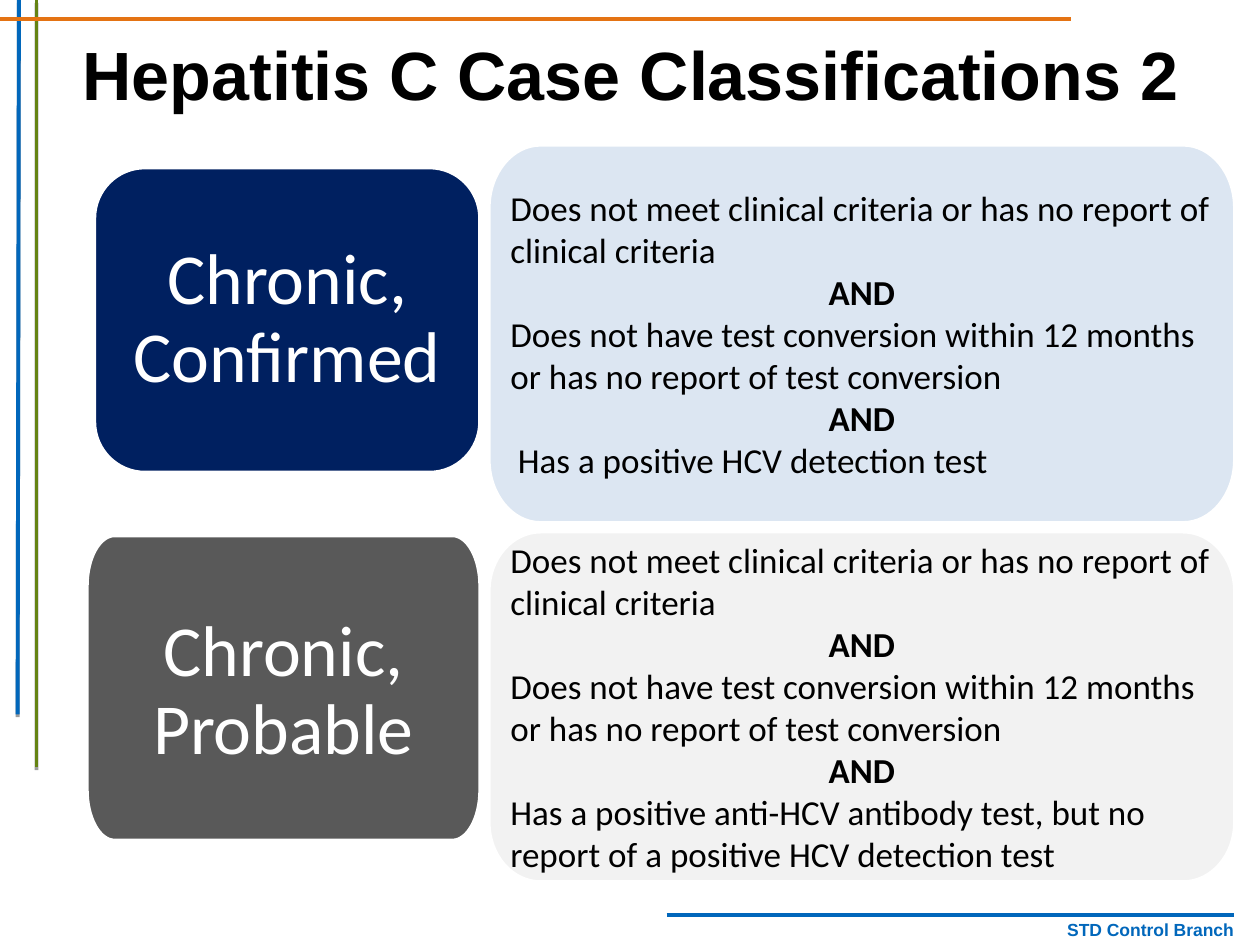
from dataclasses import dataclass

import pptx
import pptx.dml.color
import pptx.enum.shapes
import pptx.enum.text
import pptx.oxml
import pptx.oxml.ns
import pptx.util
from pptx.util import Inches

RGB = pptx.dml.color.RGBColor
ALIGN = pptx.enum.text.PP_ALIGN
ANCHOR = pptx.enum.text.MSO_ANCHOR

BLACK = RGB(0x00, 0x00, 0x00)
WHITE = RGB(0xFF, 0xFF, 0xFF)
BLUE = RGB(0x01, 0x67, 0xBB)
GREEN = RGB(0x65, 0x83, 0x13)
ORANGE = RGB(0xE4, 0x73, 0x13)
NAVY = RGB(0x00, 0x20, 0x60)
GRAY = RGB(0x59, 0x59, 0x59)
PALE_BLUE = RGB(0xDC, 0xE6, 0xF2)
PALE_GRAY = RGB(0xF2, 0xF2, 0xF2)

CRITERIA_LEFT, CRITERIA_WIDTH = 3.88, 5.92
LABEL_RIGHT, LABEL_HEIGHT = 3.81, 2.42
CURVE = 0.55  # share of the corner radius that a Bezier handle covers
SHARED_CRITERIA = (
    "Does not meet clinical criteria or has no report of clinical criteria",
    "Does not have test conversion within 12 months or has no report of test conversion",
)


@dataclass
class Rule:
    start: tuple[float, float]
    end: tuple[float, float]
    color: RGB
    shadow: bool = False


@dataclass
class Panel:
    left: float
    top: float
    width: float
    height: float
    rx: float
    ry: float
    fill: RGB
    inset_x: float = 0.17
    inset_top: float = 0.12
    inset_bottom: float = 0.12


@dataclass
class Classification:
    label: str
    label_panel: Panel
    criteria_panel: Panel
    last_criterion: str
    last_indent: float = 0


RULES = [
    Rule((5.29, 7.26), (9.79, 7.26), BLUE),
    Rule((0.15, 0), (0.14, 5.67), BLUE, shadow=True),
    Rule((0.29, 0), (0.29, 6.09), GREEN, shadow=True),
    Rule((0, 0.15), (8.5, 0.15), ORANGE),
]

CLASSIFICATIONS = [
    Classification(
        "Chronic, Confirmed",
        Panel(0.75, 1.33, LABEL_RIGHT - 0.75, LABEL_HEIGHT, 0.4, 0.4, NAVY, 0.29, 0.2, 0.2),
        Panel(CRITERIA_LEFT, 1.15, CRITERIA_WIDTH, 3, 0.41, 0.5, PALE_BLUE),
        "Has a positive HCV detection test",
        0.06,
    ),
    Classification(
        "Chronic, Probable",
        Panel(0.69, 4.25, LABEL_RIGHT - 0.69, LABEL_HEIGHT, 0.22, 0.4, GRAY, inset_top=0.19),
        Panel(CRITERIA_LEFT, 4.22, CRITERIA_WIDTH, 2.78, 0.41, 0.47, PALE_GRAY),
        "Has a positive anti-HCV antibody test, but no report of a positive HCV detection test",
    ),
]


def add_run(p, text: str, size: float, font: str, color: RGB, bold: bool = False) -> None:
    r = p.add_run()
    r.text = text
    r.font.size = pptx.util.Pt(size)
    r.font.name = font
    r.font.bold = bold
    r.font.color.rgb = color


def add_rule(slide, rule: Rule) -> None:
    points = [Inches(v) for v in rule.start + rule.end]
    s = slide.shapes.add_connector(pptx.enum.shapes.MSO_CONNECTOR.STRAIGHT, *points)
    s.line.color.rgb = rule.color
    s.line.width = pptx.util.Pt(2.25)
    shadow = (
        '<a:outerShdw dist="20320" dir="5400000" rotWithShape="0">'
        '<a:srgbClr val="000000"><a:alpha val="38000"/></a:srgbClr></a:outerShdw>'
    ) if rule.shadow else ""
    s._element.spPr.append(pptx.oxml.parse_xml(
        f'<a:effectLst {pptx.oxml.ns.nsdecls("a")}>{shadow}</a:effectLst>'))


def round_corners(s) -> None:
    """Turn every other segment of the outline, its cut corners, into a curve."""
    points = s._element.findall(".//" + pptx.oxml.ns.qn("a:pt"))
    coords = [(int(pt.get("x")), int(pt.get("y"))) for pt in points]
    for i in range(1, len(points), 2):
        (x0, y0), (x1, y1) = coords[i - 1], coords[i]
        corner = (x0, y1) if i % 4 == 1 else (x1, y0)
        handles = [tuple(round(a + CURVE * (b - a)) for a, b in zip(end, corner))
                   for end in ((x0, y0), (x1, y1))]
        pts = "".join(f'<a:pt x="{x}" y="{y}"/>' for x, y in handles + [(x1, y1)])
        segment = points[i].getparent()
        segment.getparent().replace(segment, pptx.oxml.parse_xml(
            f'<a:cubicBezTo {pptx.oxml.ns.nsdecls("a")}>{pts}</a:cubicBezTo>'))


def add_panel(slide, panel: Panel):
    """Draw the panel and return its text frame."""
    left, top = panel.left, panel.top
    right, bottom = left + panel.width, top + panel.height
    x0, x1 = left + panel.rx, right - panel.rx
    y0, y1 = top + panel.ry, bottom - panel.ry
    outline = [(left, y0), (x0, top), (x1, top), (right, y0),
               (right, y1), (x1, bottom), (x0, bottom), (left, y1)]
    points = [(Inches(x), Inches(y)) for x, y in outline]
    builder = slide.shapes.build_freeform(*points[0])
    builder.add_line_segments(points[1:], close=True)
    s = builder.convert_to_shape()
    round_corners(s)
    s.shadow.inherit = False
    s.fill.solid()
    s.fill.fore_color.rgb = panel.fill
    s.line.color.rgb = WHITE
    s.line.width = pptx.util.Pt(2)
    tf = s.text_frame
    tf.word_wrap = True
    tf.vertical_anchor = ANCHOR.MIDDLE
    tf.margin_left = tf.margin_right = Inches(panel.inset_x)
    tf.margin_top = Inches(panel.inset_top)
    tf.margin_bottom = Inches(panel.inset_bottom)
    return tf


def add_classification(slide, item: Classification) -> None:
    p = add_panel(slide, item.label_panel).paragraphs[0]
    p.alignment = ALIGN.CENTER
    p.line_spacing = 0.9
    add_run(p, item.label, 41, "Calibri", WHITE)

    tf = add_panel(slide, item.criteria_panel)
    first, second = SHARED_CRITERIA
    for i, text in enumerate([first, "AND", second, "AND", item.last_criterion]):
        p = tf.add_paragraph() if i else tf.paragraphs[0]
        joins = text == "AND"
        p.alignment = ALIGN.CENTER if joins else ALIGN.LEFT
        add_run(p, text, 20, "Calibri", BLACK, bold=joins)
    if item.last_indent:
        p._p.get_or_add_pPr().set("marL", str(Inches(item.last_indent)))


def add_title(slide, text: str) -> None:
    s = slide.shapes.title
    s.left, s.top, s.width, s.height = (Inches(v) for v in (0.42, 0.17, 9.17, 0.83))
    tf = s.text_frame
    tf.auto_size = pptx.enum.text.MSO_AUTO_SIZE.NONE
    tf.vertical_anchor = ANCHOR.MIDDLE
    p = tf.paragraphs[0]
    p.alignment = ALIGN.CENTER
    add_run(p, text, 39, "Arial", BLACK, bold=True)


def add_footer(slide, text: str) -> None:
    s = slide.shapes.add_textbox(*(Inches(v) for v in (5.39, 7.18, 4.5, 0.4)))
    tf = s.text_frame
    tf.word_wrap = True
    tf.vertical_anchor = ANCHOR.MIDDLE
    p = tf.paragraphs[0]
    p.alignment = ALIGN.RIGHT
    add_run(p, text, 10, "Arial", BLUE, bold=True)


def main() -> None:
    prs = pptx.Presentation()
    prs.slide_width, prs.slide_height = Inches(10), Inches(7.5)
    slide = prs.slides.add_slide(prs.slide_layouts[5])
    add_footer(slide, "STD Control Branch")
    for rule in RULES:
        add_rule(slide, rule)
    add_title(slide, "Hepatitis C Case Classifications 2")
    for item in CLASSIFICATIONS:
        add_classification(slide, item)
    prs.save("out.pptx")


if __name__ == "__main__":
    main()
